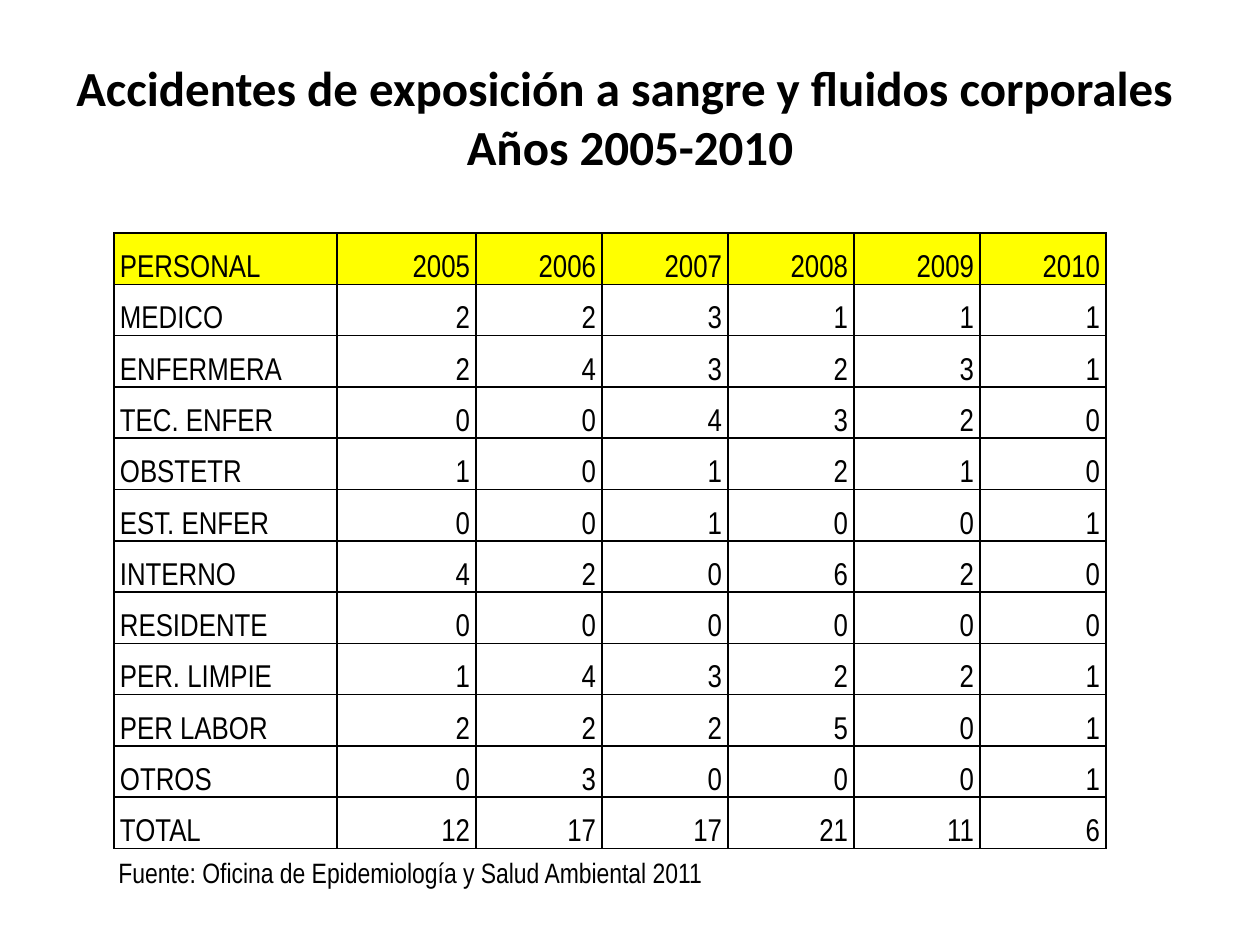
from lxml.etree import SubElement
from pptx import Presentation
from pptx.dml.color import RGBColor
from pptx.enum.text import MSO_ANCHOR, MSO_AUTO_SIZE, PP_ALIGN
from pptx.oxml.ns import qn
from pptx.util import Pt

SCALE = 914400 / 126
BLACK, YELLOW = "000000", "FFFF00"
TITLE_BOX = (63, 38, 1134, 157)
TABLE_BOX = (114, 233, 992, 616)
SOURCE_BOX = (106, 849, 614, 47)
COLUMN_WIDTHS = [223, 139] + [126] * 5
TITLE = "Accidentes de exposición a sangre y fluidos corporales \vAños 2005-2010"
SOURCE = "Fuente: Oficina de Epidemiología y Salud Ambiental 2011"
ACCIDENTS = [
    ("PERSONAL", 2005, 2006, 2007, 2008, 2009, 2010),
    ("MEDICO", 2, 2, 3, 1, 1, 1),
    ("ENFERMERA", 2, 4, 3, 2, 3, 1),
    ("TEC. ENFER", 0, 0, 4, 3, 2, 0),
    ("OBSTETR", 1, 0, 1, 2, 1, 0),
    ("EST. ENFER", 0, 0, 1, 0, 0, 1),
    ("INTERNO", 4, 2, 0, 6, 2, 0),
    ("RESIDENTE", 0, 0, 0, 0, 0, 0),
    ("PER. LIMPIE", 1, 4, 3, 2, 2, 1),
    ("PER LABOR", 2, 2, 2, 5, 0, 1),
    ("OTROS", 0, 3, 0, 0, 0, 1),
    ("TOTAL", 12, 17, 17, 21, 11, 6),
]
TITLE_FONT = {"name": "Calibri", "size": Pt(28), "bold": True}
TABLE_FONT = {"name": "Arial Narrow", "size": Pt(18), "bold": False}
SOURCE_FONT = {"name": "Arial Narrow", "size": Pt(16), "bold": False}


def emu(pixels):
    """Turn px into EMU."""
    return round(pixels * SCALE)


def color(value):
    """Turn a hex string into a colour."""
    return RGBColor.from_string(value)


def apply(target, values):
    """Set every attribute named in a dict."""
    for name, value in values.items():
        setattr(target, name, value)


def write(frame, text, font, align):
    """Fill a text frame with one formatted paragraph."""
    frame.text = text
    para = frame.paragraphs[0]
    para.alignment = align
    for span in para.runs:
        apply(span.font, font)
        span.font.color.rgb = color(BLACK)
    return para


def place(shape, box):
    """Move a shape to a box given in px."""
    apply(shape, dict(zip(("left", "top", "width", "height"), map(emu, box))))


def add_title(page, box):
    """Place the slide title."""
    title = page.shapes.title
    place(title, box)
    title.text_frame.vertical_anchor = MSO_ANCHOR.MIDDLE
    write(title.text_frame, TITLE, TITLE_FONT, PP_ALIGN.CENTER)


def add_borders(cell):
    """Draw a thin black line on each side of a cell."""
    properties = cell._tc.get_or_add_tcPr()
    for position, side in enumerate(("a:lnL", "a:lnR", "a:lnT", "a:lnB")):
        line = SubElement(properties, qn(side), w=str(Pt(1)))
        fill = SubElement(line, qn("a:solidFill"))
        SubElement(fill, qn("a:srgbClr"), val=BLACK)
        properties.insert(position, line)


def format_cell(cell, value, is_header, is_label):
    """Write and style one table cell."""
    apply(cell, {"margin_left": emu(6), "margin_right": emu(6), "margin_top": 0,
                 "margin_bottom": 0, "vertical_anchor": MSO_ANCHOR.BOTTOM})
    align = PP_ALIGN.LEFT if is_label else PP_ALIGN.RIGHT
    write(cell.text_frame, str(value), TABLE_FONT, align).line_spacing = 1.5
    if is_header:
        cell.fill.solid()
        cell.fill.fore_color.rgb = color(YELLOW)
    else:
        cell.fill.background()
    add_borders(cell)


def add_accident_table(page, box):
    """Place the table of accidents by staff group and year."""
    table = page.shapes.add_table(len(ACCIDENTS), len(COLUMN_WIDTHS), *map(emu, box)).table
    table.horz_banding = False
    for column, width in zip(table.columns, COLUMN_WIDTHS):
        column.width = emu(width)
    for row_index, values in enumerate(ACCIDENTS):
        table.rows[row_index].height = emu(box[3] / len(ACCIDENTS))
        for column_index, value in enumerate(values):
            cell = table.cell(row_index, column_index)
            format_cell(cell, value, row_index == 0, column_index == 0)


def add_source(page, box):
    """Place the source line under the table."""
    frame = page.shapes.add_textbox(*map(emu, box)).text_frame
    apply(frame, {"word_wrap": False, "vertical_anchor": MSO_ANCHOR.MIDDLE,
                  "auto_size": MSO_AUTO_SIZE.SHAPE_TO_FIT_TEXT})
    write(frame, SOURCE, SOURCE_FONT, PP_ALIGN.LEFT)


def main():
    """Build and save the deck."""
    deck = Presentation()
    apply(deck, {"slide_width": emu(1260), "slide_height": emu(945)})
    page = deck.slides.add_slide(deck.slide_layouts[5])
    add_title(page, TITLE_BOX)
    add_accident_table(page, TABLE_BOX)
    add_source(page, SOURCE_BOX)
    deck.save("out.pptx")


if __name__ == "__main__":
    main()
